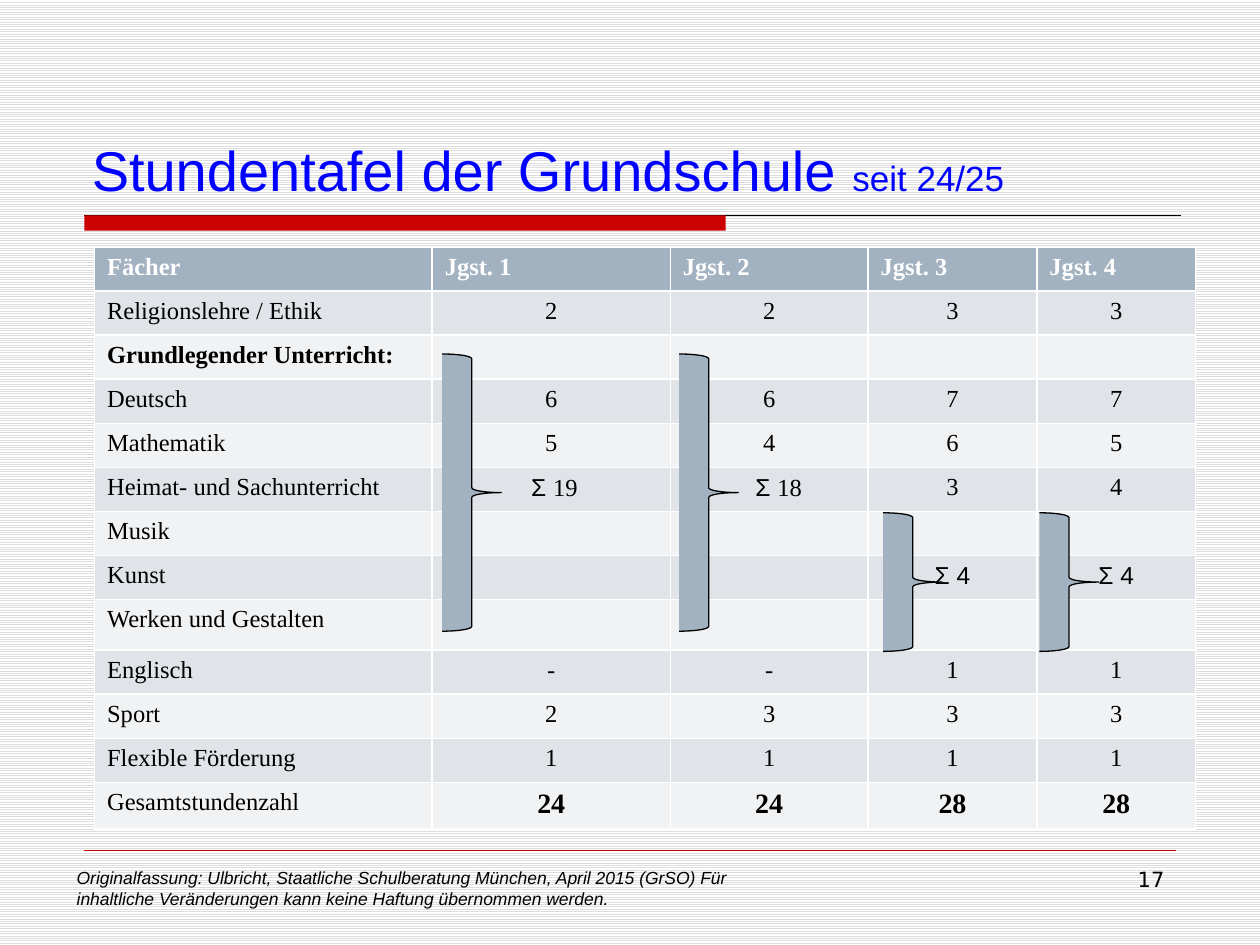
"""Build the timetable slide for primary school years 1 to 4."""
from pptx import Presentation
from pptx.dml.color import RGBColor
from pptx.enum.dml import MSO_PATTERN
from pptx.enum.shapes import MSO_CONNECTOR, MSO_SHAPE
from pptx.enum.text import MSO_ANCHOR, PP_ALIGN
from pptx.oxml.ns import qn
from pptx.util import Inches, Pt
from lxml import etree

LEFT, MID, RIGHT = PP_ALIGN.LEFT, PP_ALIGN.CENTER, PP_ALIGN.RIGHT
TOP, BOTTOM = MSO_ANCHOR.TOP, MSO_ANCHOR.BOTTOM
BRACE, BAR = MSO_SHAPE.RIGHT_BRACE, MSO_SHAPE.RECTANGLE
LINE = MSO_CONNECTOR.STRAIGHT
STRIPE = MSO_PATTERN.LIGHT_HORIZONTAL

THEME = {
    "sans": "Arial", "serif": "Times New Roman", "page": "DejaVu Sans",
    "title": 32, "since": 20, "cell": 14, "total": 16, "foot": 10, "num": 12,
    "blue": "0000FF", "red": "CC0000", "black": "000000", "white": "FFFFFF",
    "grey": "DDDDDD", "head": "A3B2C1", "odd": "E0E4E9", "even": "F0F2F4",
}

TITLE = [("Stundentafel der Grundschule ", {}), ("seit 24/25", {"size": "since"})]
FOOT = ("Originalfassung: Ulbricht, Staatliche Schulberatung München, "
        "April 2015 (GrSO) Für inhaltliche Veränderungen kann keine "
        "Haftung übernommen werden.")
PAGE = "17"


def sigma(hours):
    return [("Σ ", {"face": "sans"}), (hours, {})]


FOUR = [("Σ 4", {"face": "sans"})]
ROWS = [
    ["Fächer", "Jgst. 1", "Jgst. 2", "Jgst. 3", "Jgst. 4"],
    ["Religionslehre / Ethik", "2", "2", "3", "3"],
    ["Grundlegender Unterricht:", "", "", "", ""],
    ["Deutsch", "6", "6", "7", "7"],
    ["Mathematik", "5", "4", "6", "5"],
    ["Heimat- und Sachunterricht", sigma("19"), sigma("18"), "3", "4"],
    ["Musik", "", "", "", ""],
    ["Kunst", "", "", FOUR, FOUR],
    ["Werken und Gestalten", "", "", "", ""],
    ["Englisch", "-", "-", "1", "1"],
    ["Sport", "2", "3", "3", "3"],
    ["Flexible Förderung", "1", "1", "1", "1"],
    ["Gesamtstundenzahl", "24", "24", "28", "28"],
]
BASIC, CRAFT, LAST = 2, 8, len(ROWS) - 1
WIDTHS = [2.68, 1.89, 1.57, 1.34, 1.26]
HIGH = {CRAFT: 0.4, LAST: 0.37}
INDENT = {(5, 1): 0.15, (5, 2): 0.25}
BRACES = [(3.51, 2.81, 2.2), (5.39, 2.81, 2.2), (7.01, 4.07, 1.1), (8.25, 4.07, 1.1)]


def color(name):
    return RGBColor.from_string(THEME[name])


def put(frame, text, face="sans", size="cell", ink="black", bold=False,
        italic=False, align=LEFT):
    para = frame.paragraphs[0]
    para.alignment = align
    runs = [(text, {})] if isinstance(text, str) else text
    for words, own in runs:
        if words:
            run = para.add_run()
            run.text = words
            font = run.font
            font.name = THEME[own.get("face", face)]
            font.size = Pt(THEME[own.get("size", size)])
            font.color.rgb = color(ink)
            font.bold, font.italic = bold, italic
    if not para.runs:
        end = etree.SubElement(para._p, qn("a:endParaRPr"))
        end.set("sz", str(THEME[size] * 100))


def box(slide, area, text, anchor=TOP, **style):
    frame = slide.shapes.add_textbox(*map(Inches, area)).text_frame
    frame.word_wrap = True
    frame.vertical_anchor = anchor
    put(frame, text, **style)


def rule(slide, start, end, top, ink, width):
    line = slide.shapes.add_connector(
        LINE, Inches(start), Inches(top), Inches(end), Inches(top))
    line.line.color.rgb = color(ink)
    line.line.width = Pt(width)
    etree.SubElement(line._element.spPr, qn("a:effectLst"))


def shape(slide, kind, area, ink):
    item = slide.shapes.add_shape(kind, *map(Inches, area))
    item.shadow.inherit = False
    item.fill.solid()
    item.fill.fore_color.rgb = color(ink)
    return item


def look(row, col):
    if row == 0:
        return {"ink": "white", "bold": True}
    if col == 0:
        return {"bold": row == BASIC}
    if row == LAST:
        return {"size": "total", "bold": True, "align": MID}
    return {"align": MID}


def grid(slide):
    highs = [HIGH.get(row, 0.35) for row in range(len(ROWS))]
    area = (0.75, 1.96, sum(WIDTHS), sum(highs))
    table = slide.shapes.add_table(
        len(ROWS), len(WIDTHS), *map(Inches, area)).table
    for col, width in zip(table.columns, WIDTHS):
        col.width = Inches(width)
    for row, texts in enumerate(ROWS):
        table.rows[row].height = Inches(highs[row])
        fill = "head" if row == 0 else "odd" if row % 2 else "even"
        for col, text in enumerate(texts):
            cell = table.cell(row, col)
            cell.fill.solid()
            cell.fill.fore_color.rgb = color(fill)
            cell.margin_left = Inches(INDENT.get((row, col), 0.1))
            put(cell.text_frame, text, face="serif", **look(row, col))


def main():
    deck = Presentation()
    deck.slide_width, deck.slide_height = Inches(10), Inches(7.5)
    slide = deck.slides.add_slide(deck.slide_layouts[6])
    back = slide.background.fill
    back.patterned()
    back.pattern = STRIPE
    back.fore_color.rgb = color("grey")
    back.back_color.rgb = color("white")

    rule(slide, 0.67, 9.37, 1.71, "black", 0.75)
    shape(slide, BAR, (0.67, 1.71, 5.09, 0.12), "red").line.fill.background()
    rule(slide, 0.67, 9.33, 6.75, "red", 0.25)
    box(slide, (0.51, 6.83, 5.51, 0.52), FOOT, size="foot", italic=True)
    box(slide, (7.17, 6.83, 2.17, 0.52), PAGE, face="page", size="num", align=RIGHT)
    box(slide, (0.63, 0.33, 8.75, 1.33), TITLE, BOTTOM, size="title", ink="blue")
    grid(slide)
    for left, top, high in BRACES:
        brace = shape(slide, BRACE, (left, top, 0.47, high), "head")
        brace.adjustments[0] = 0.08
        brace.line.color.rgb = color("black")
        brace.line.width = Pt(0.75)
    deck.save("out.pptx")


if __name__ == "__main__":
    main()
